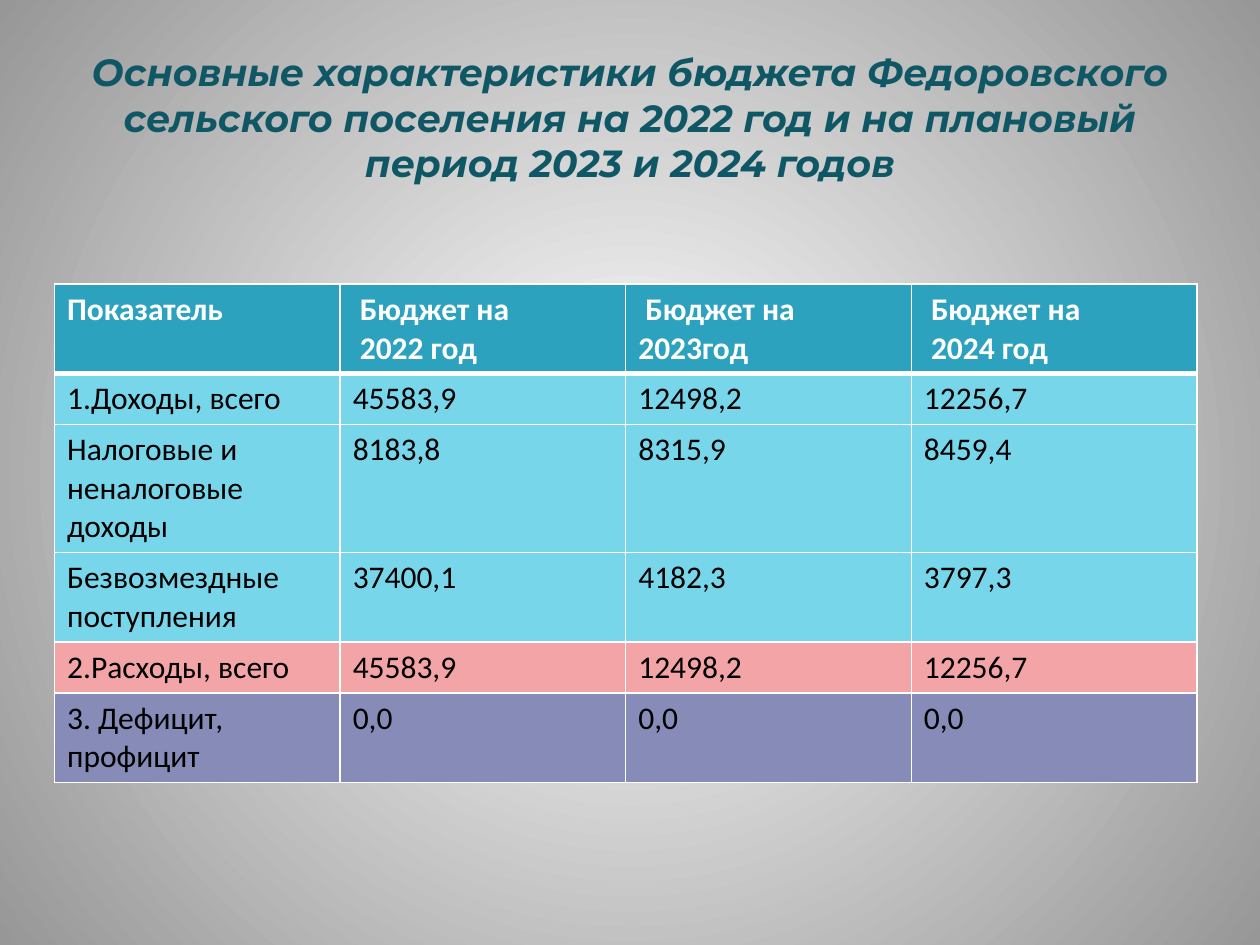
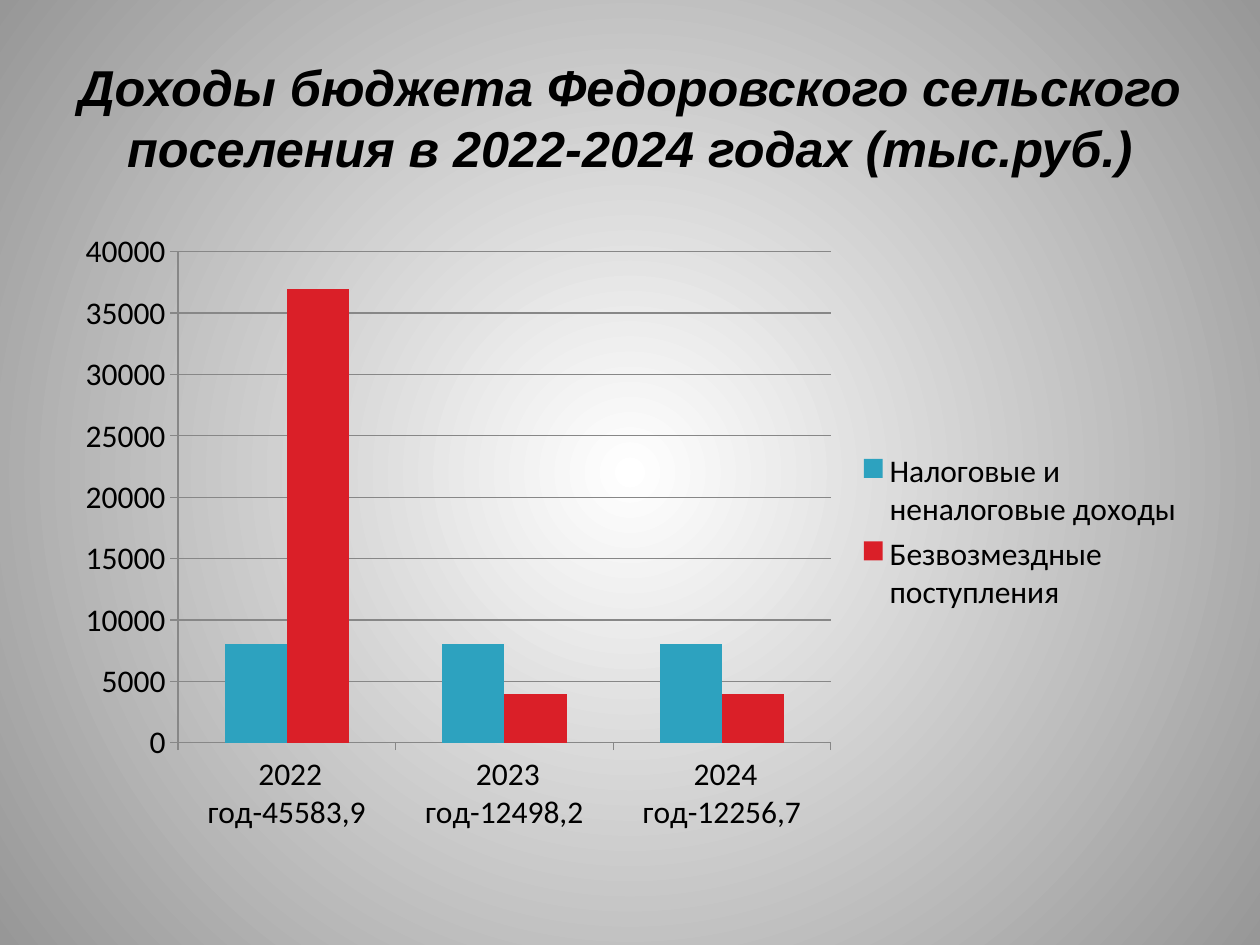
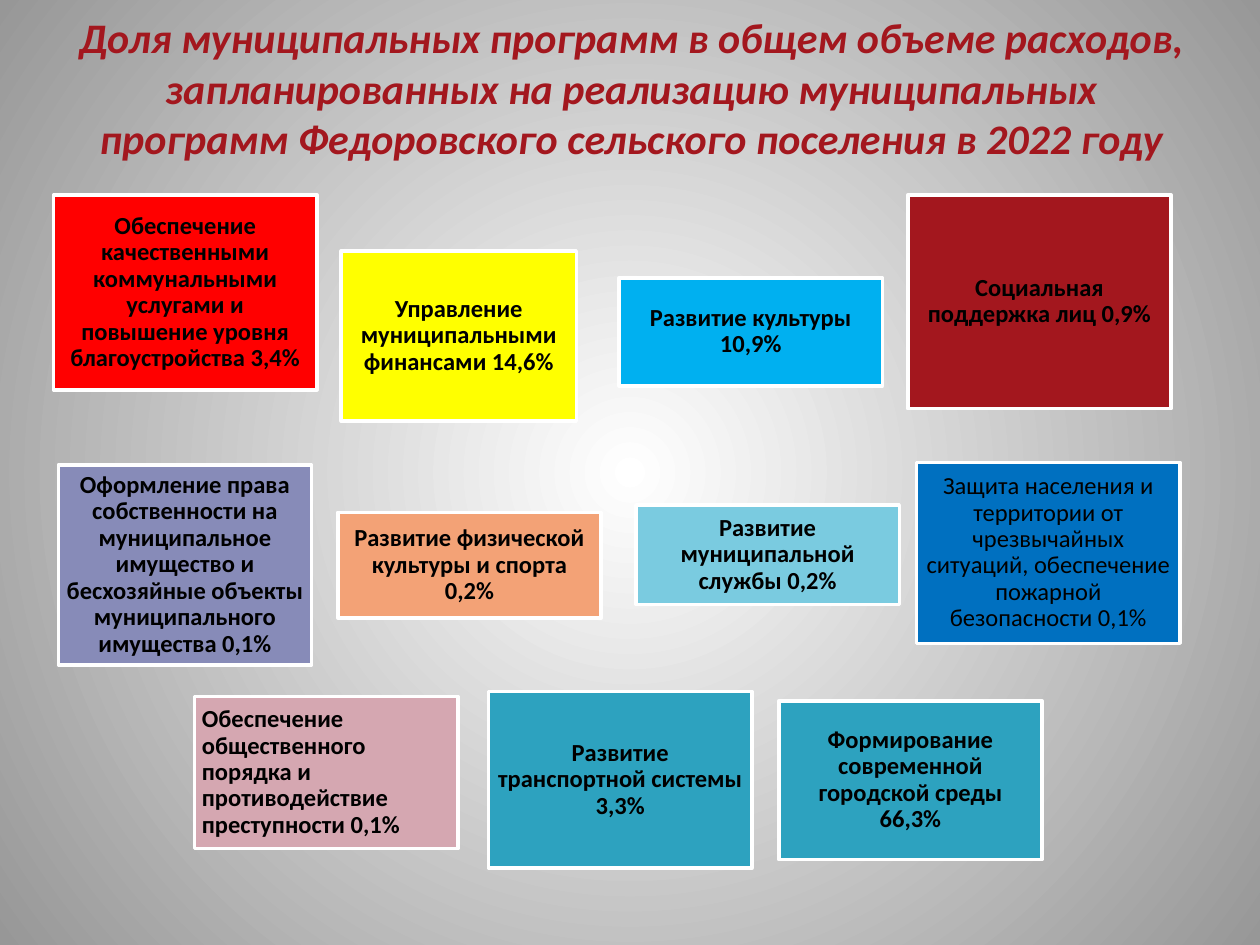
from lxml.etree import SubElement
from pptx import Presentation
from pptx.chart.data import CategoryChartData
from pptx.dml.color import RGBColor
from pptx.enum.chart import XL_CHART_TYPE, XL_LEGEND_POSITION
from pptx.enum.shapes import MSO_SHAPE
from pptx.enum.text import MSO_ANCHOR, PP_ALIGN
from pptx.oxml.ns import qn
from pptx.util import Cm, Pt

WHITE, BLACK, GREY, EDGE = "FFFFFF", "000000", "878787", "979797"
TEAL, AQUA, PINK, VIOLET = "2DA2BF", "78D6EA", "F2A4A7", "878BB8"
RED, DARK_RED, DARK_TEAL = "DA1F28", "A3171E", "105766"
FONT = "Calibri"
LEFT, WIDTH = 1.27, 22.86

BUDGET_TITLE = ("Основные характеристики бюджета Федоровского сельского поселения "
                "на 2022 год и на плановый период 2023 и 2024 годов")
INCOME_TITLE = "Доходы бюджета Федоровского сельского поселения в 2022-2024 годах (тыс.руб.)"
PROGRAM_TITLE = ("Доля муниципальных программ в общем объеме расходов, запланированных на "
                 "реализацию муниципальных программ Федоровского сельского поселения в 2022 году")

BUDGET_ROWS = [
    (TEAL, 1.8, ["Показатель", " Бюджет на\n 2022 год", " Бюджет на\n2023год", " Бюджет на\n 2024 год"]),
    (AQUA, 1.03, ["1.Доходы, всего", "45583,9", "12498,2", "12256,7"]),
    (AQUA, 2.58, ["Налоговые и неналоговые доходы", "8183,8", "8315,9", "8459,4"]),
    (AQUA, 1.8, ["Безвозмездные поступления", "37400,1", "4182,3", "3797,3"]),
    (PINK, 1.03, ["2.Расходы, всего", "45583,9", "12498,2", "12256,7"]),
    (VIOLET, 1.8, ["3. Дефицит, профицит", "0,0", "0,0", "0,0"]),
]

YEARS = [" 2022 год-45583,9", " 2023 год-12498,2", " 2024 год-12256,7"]
INCOME = [
    ("Налоговые и неналоговые доходы", TEAL, [8000, 8000, 8000]),
    ("Безвозмездные поступления", RED, [37000, 4000, 4000]),
]

BOX_WIDTH = 5.31
PROGRAMS = [
    ("Обеспечение качественными коммунальными услугами и повышение уровня благоустройства 3,4%",
     "FF0000", 1.08, 3.93, BOX_WIDTH, 3.93),
    ("Управление муниципальными финансами 14,6%", "FFFF00", 6.88, 5.06, 4.74, 3.43),
    ("Развитие культуры 10,9%", "00B0F0", 12.48, 5.6, BOX_WIDTH, 2.18),
    ("Социальная поддержка лиц 0,9%", DARK_RED, 18.3, 3.93, BOX_WIDTH, 4.31),
    ("Оформление права собственности на муниципальное имущество и бесхозяйные объекты "
     "муниципального имущества 0,1%", VIOLET, 1.18, 9.37, 5.1, 4.04),
    ("Развитие физической культуры и спорта 0,2%", "F3A276", 6.81, 10.33, BOX_WIDTH, 2.13),
    ("Развитие муниципальной службы 0,2%", "7ACBE0", 12.82, 10.18, BOX_WIDTH, 2.01),
    ("Защита населения и территории от чрезвычайных ситуаций, обеспечение пожарной "
     "безопасности 0,1%", "0070C0", 18.48, 9.32, BOX_WIDTH, 3.65),
    ("Обеспечение общественного порядка и противодействие преступности 0,1%",
     "D5A7B1", 3.92, 14.04, BOX_WIDTH, 3.07),
    ("Развитие транспортной системы 3,3%", TEAL, 9.85, 13.94, BOX_WIDTH, 3.56),
    ("Формирование современной городской среды 66,3%", TEAL, 15.7, 14.13, BOX_WIDTH, 3.2),
]
REGULAR_BOX, LEFT_ALIGNED_BOX = 7, 8


def rgb(color):
    return RGBColor.from_string(color)


def style_font(font, size, color, name=FONT, bold=False, italic=False):
    font.size, font.name, font.bold, font.italic = Pt(size), name, bold, italic
    font.color.rgb = rgb(color)


def write(tf, text, size, color, align=PP_ALIGN.LEFT, spacing=1.0, **style):
    tf.text = text
    tf.word_wrap = True
    for p in tf.paragraphs:
        p.alignment, p.line_spacing = align, spacing
        for r in p.runs:
            style_font(r.font, size, color, **style)


def set_background(master):
    fill = master.background.fill
    fill.gradient()
    for stop, color, position in zip(fill.gradient_stops, (WHITE, EDGE), (0, 1)):
        stop.color.rgb, stop.position = rgb(color), position
    grad = next(master.element.iter(qn("a:gradFill")))
    for lin in grad.findall(qn("a:lin")):
        grad.remove(lin)
    circle = SubElement(grad, qn("a:path"), {"path": "circle"})
    SubElement(circle, qn("a:fillToRect"), {side: "50000" for side in "ltrb"})


def add_slide(prs, title, size, color, font=FONT, left=LEFT, top=0.77, height=3.18):
    s = prs.slides.add_slide(prs.slide_layouts[6])
    sp = s.shapes.add_textbox(Cm(left), Cm(top), Cm(WIDTH), Cm(height))
    write(sp.text_frame, title, size, color, PP_ALIGN.CENTER, name=font, bold=True, italic=True)
    sp.text_frame.vertical_anchor = MSO_ANCHOR.MIDDLE
    return s


def set_borders(cell, **widths):
    props = cell._tc.get_or_add_tcPr()
    for side in "LRTB":
        ln = SubElement(props, qn(f"a:ln{side}"), {"w": str(Pt(widths.get(side, 1)))})
        SubElement(SubElement(ln, qn("a:solidFill")), qn("a:srgbClr"), {"val": WHITE})


def add_budget_table(s):
    columns = len(BUDGET_ROWS[0][2])
    total_height = sum(height for _, height, _ in BUDGET_ROWS)
    table = s.shapes.add_table(len(BUDGET_ROWS), columns, Cm(1.1), Cm(5.73),
                               Cm(23.03), Cm(total_height)).table
    for i, (color, height, texts) in enumerate(BUDGET_ROWS):
        table.rows[i].height = Cm(height)
        header = i == 0
        for j, text in enumerate(texts):
            cell = table.cell(i, j)
            set_borders(cell, T=3 if i == 1 else 1, B=3 if header else 1)
            cell.fill.solid()
            cell.fill.fore_color.rgb = rgb(color)
            write(cell.text_frame, text, 18, WHITE if header else BLACK, bold=header)


def add_income_chart(s):
    data = CategoryChartData(number_format="0")
    data.categories = YEARS
    for name, _, values in INCOME:
        data.add_series(name, values)
    chart = s.shapes.add_chart(XL_CHART_TYPE.COLUMN_CLUSTERED, Cm(LEFT), Cm(4.44),
                               Cm(WIDTH), Cm(12.57), data).chart
    style_font(chart.font, 18, BLACK)
    chart.has_title = False
    chart.has_legend = True
    chart.legend.position = XL_LEGEND_POSITION.RIGHT
    chart.legend.include_in_layout = False
    plot = chart.plots[0]
    plot.gap_width, plot.overlap, plot.vary_by_categories = 150, 0, False
    for series, (_, color, _) in zip(plot.series, INCOME):
        series.format.fill.solid()
        series.format.fill.fore_color.rgb = rgb(color)
    axis = chart.value_axis
    axis.minimum_scale, axis.maximum_scale, axis.major_unit = 0, 40000, 5000
    for part in (axis, axis.major_gridlines, chart.category_axis):
        part.format.line.color.rgb = rgb(GREY)
        part.format.line.width = Pt(0.75)


def add_program_boxes(s):
    for i, (text, color, *place) in enumerate(PROGRAMS):
        sp = s.shapes.add_shape(MSO_SHAPE.RECTANGLE, *map(Cm, place))
        sp.shadow.inherit = False
        sp.fill.solid()
        sp.fill.fore_color.rgb = rgb(color)
        sp.line.color.rgb = rgb(WHITE)
        sp.line.width = Pt(2)
        tf = sp.text_frame
        tf.margin_left = tf.margin_right = tf.margin_top = tf.margin_bottom = Cm(0.15)
        tf.vertical_anchor = MSO_ANCHOR.MIDDLE
        align = PP_ALIGN.LEFT if i == LEFT_ALIGNED_BOX else PP_ALIGN.CENTER
        write(tf, text, 14, BLACK, align, 0.9, bold=i != REGULAR_BOX)


def main():
    prs = Presentation()
    prs.slide_width, prs.slide_height = Cm(25.4), Cm(19.05)
    set_background(prs.slide_master)
    add_budget_table(add_slide(prs, BUDGET_TITLE, 21.6, DARK_TEAL, "Montserrat"))
    add_income_chart(add_slide(prs, INCOME_TITLE, 28.8, BLACK, "Arial"))
    add_program_boxes(add_slide(prs, PROGRAM_TITLE, 24, DARK_RED, left=1.3, top=0, height=3.53))
    prs.save("out.pptx")


if __name__ == "__main__":
    main()
